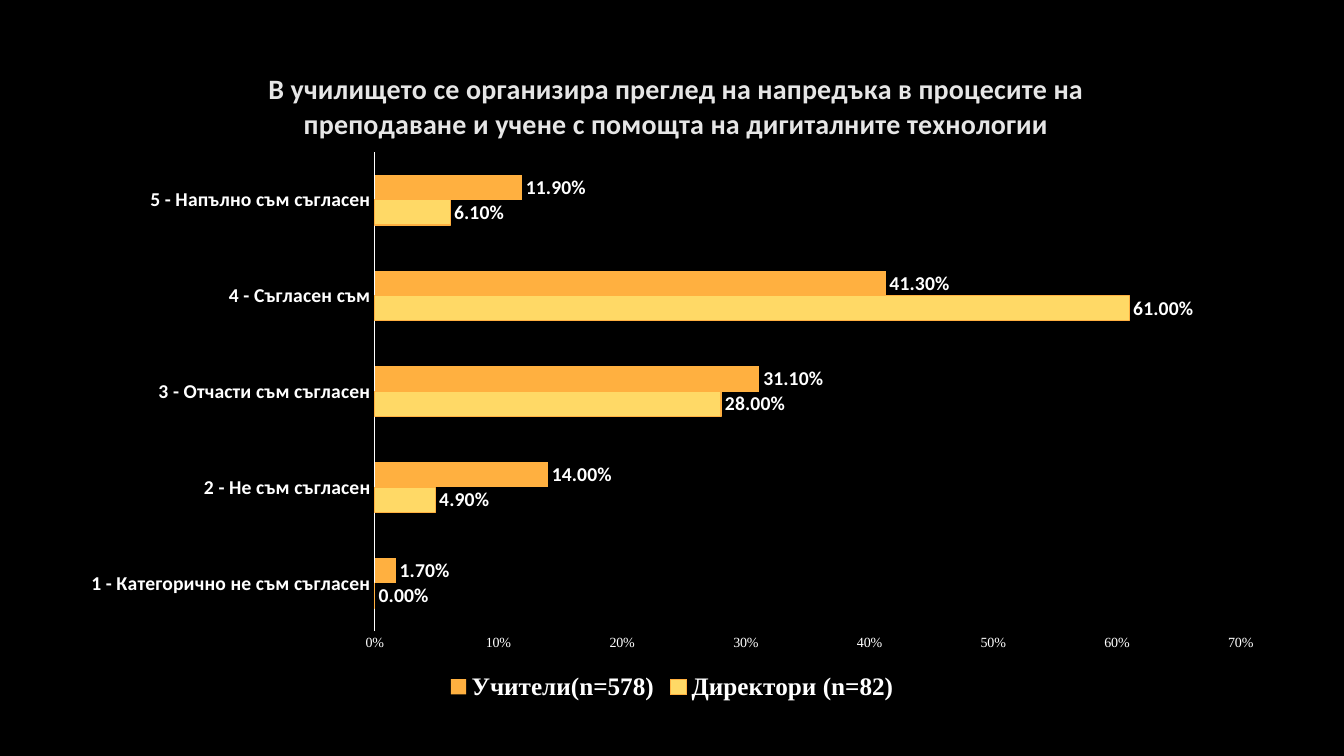
from dataclasses import dataclass

from lxml import etree
from pptx import Presentation
from pptx.chart.data import CategoryChartData
from pptx.dml.color import RGBColor
from pptx.enum.chart import XL_CHART_TYPE, XL_LABEL_POSITION, XL_LEGEND_POSITION, XL_TICK_MARK
from pptx.oxml.ns import qn
from pptx.util import Cm, Pt

BAR_CLUSTERED = XL_CHART_TYPE.BAR_CLUSTERED
OUTSIDE_END = XL_LABEL_POSITION.OUTSIDE_END
LEGEND_BOTTOM = XL_LEGEND_POSITION.BOTTOM
NO_TICK = XL_TICK_MARK.NONE


@dataclass(frozen=True)
class Theme:
    background: RGBColor = RGBColor(0, 0, 0)
    text: RGBColor = RGBColor(0xFF, 0xFF, 0xFF)
    heading: RGBColor = RGBColor(0xE6, 0xE6, 0xE6)
    directors: RGBColor = RGBColor(0xFF, 0xD9, 0x66)
    teachers: RGBColor = RGBColor(0xFF, 0xB0, 0x40)
    sans: str = "Calibri"
    serif: str = "Times New Roman"
    heading_size: Pt = Pt(20)
    legend_size: Pt = Pt(18)
    label_size: Pt = Pt(14)
    scale_size: Pt = Pt(10)
    line_width: Pt = Pt(0.75)


THEME = Theme()

QUESTION = (
    "В училището се организира преглед на напредъка в процесите на "
    "преподаване и учене с помощта на дигиталните технологии"
)
ANSWERS = [
    "1 - Категорично не съм съгласен",
    "2 - Не съм съгласен",
    "3 - Отчасти съм съгласен",
    "4 - Съгласен съм",
    "5 - Напълно съм съгласен",
]
DIRECTORS = ("Директори (n=82)", [0, 0.049, 0.28, 0.61, 0.061])
TEACHERS = ("Учители(n=578)", [0.017, 0.14, 0.311, 0.413, 0.119])


def style_font(font, size, color=THEME.text, name=THEME.sans, bold=True):
    font.size = size
    font.bold = bold
    font.name = name
    font.color.rgb = color


def place_part(part, **fractions):
    layout = part.find(qn("c:layout"))
    if layout is None:
        layout = etree.Element(qn("c:layout"))
        part.insert(0, layout)
    manual = etree.SubElement(layout, qn("c:manualLayout"))
    if "h" in fractions and part.tag == qn("c:plotArea"):
        etree.SubElement(manual, qn("c:layoutTarget")).set("val", "inner")
    for side in ("x", "y"):
        etree.SubElement(manual, qn(f"c:{side}Mode")).set("val", "edge")
    for side, fraction in fractions.items():
        etree.SubElement(manual, qn(f"c:{side}")).set("val", str(fraction))


def add_survey_chart(slide):
    survey = CategoryChartData(number_format="0.00%")
    survey.categories = ANSWERS
    for group, shares in (DIRECTORS, TEACHERS):
        survey.add_series(group, shares)
    chart = slide.shapes.add_chart(
        BAR_CLUSTERED, Cm(1.7), Cm(1.02), Cm(30.48), Cm(16.84), survey
    ).chart
    style_font(chart.font, THEME.scale_size, bold=False)
    place_part(chart.element.find(".//" + qn("c:plotArea")), x=0.254, y=0.167, w=0.716, h=0.717)
    return chart


def style_heading(chart):
    chart.has_title = True
    heading = chart.chart_title
    question = heading.text_frame.paragraphs[0].add_run()
    question.text = QUESTION
    style_font(question.font, THEME.heading_size, THEME.heading)
    place_part(heading.element, x=0.162, y=0.035)


def style_bars(chart):
    bars = chart.plots[0]
    bars.gap_width = 182
    bars.overlap = 0
    bars.vary_by_categories = False
    for group, color in zip(bars.series, (THEME.directors, THEME.teachers)):
        group.format.fill.solid()
        group.format.fill.fore_color.rgb = color
        labels = group.data_labels
        labels.show_value = True
        labels.number_format = "0.00%"
        labels.number_format_is_linked = False
        labels.position = OUTSIDE_END
        style_font(labels.font, THEME.label_size)
    outline = bars.series[0].format.line
    outline.color.rgb = THEME.teachers
    outline.width = THEME.line_width


def style_axes(chart):
    answers, scale = chart.category_axis, chart.value_axis
    for axis in (answers, scale):
        axis.has_major_gridlines = False
        axis.major_tick_mark = axis.minor_tick_mark = NO_TICK
    answers.format.line.color.rgb = THEME.text
    answers.format.line.width = THEME.line_width
    style_font(answers.tick_labels.font, THEME.label_size)

    scale.minimum_scale, scale.maximum_scale, scale.major_unit = 0, 0.7, 0.1
    scale.format.line.fill.background()
    scale.tick_labels.number_format = "0%"
    scale.tick_labels.number_format_is_linked = False
    style_font(scale.tick_labels.font, THEME.scale_size, name=THEME.serif, bold=False)


def style_legend(chart):
    chart.has_legend = True
    chart.legend.position = LEGEND_BOTTOM
    chart.legend.include_in_layout = False
    style_font(chart.legend.font, THEME.legend_size, name=THEME.serif)
    place_part(chart.element.find(".//" + qn("c:legend")), x=0.31, y=0.947, w=0.38, h=0.05)


def main():
    deck = Presentation()
    deck.slide_width, deck.slide_height = Cm(33.87), Cm(19.05)
    slide = deck.slides.add_slide(deck.slide_layouts[6])
    slide.background.fill.solid()
    slide.background.fill.fore_color.rgb = THEME.background
    chart = add_survey_chart(slide)
    style_heading(chart)
    style_bars(chart)
    style_axes(chart)
    style_legend(chart)
    deck.save("out.pptx")


if __name__ == "__main__":
    main()
